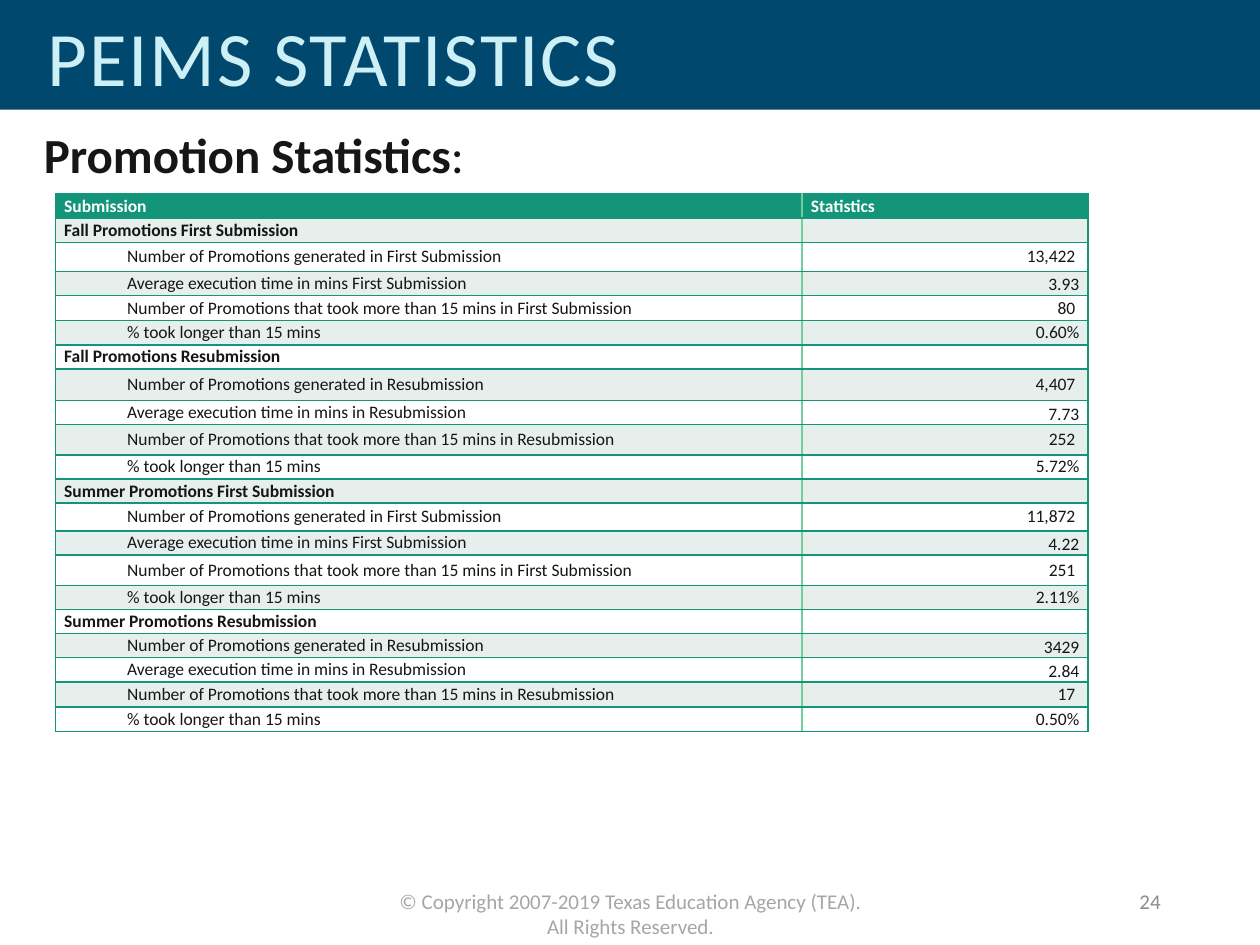
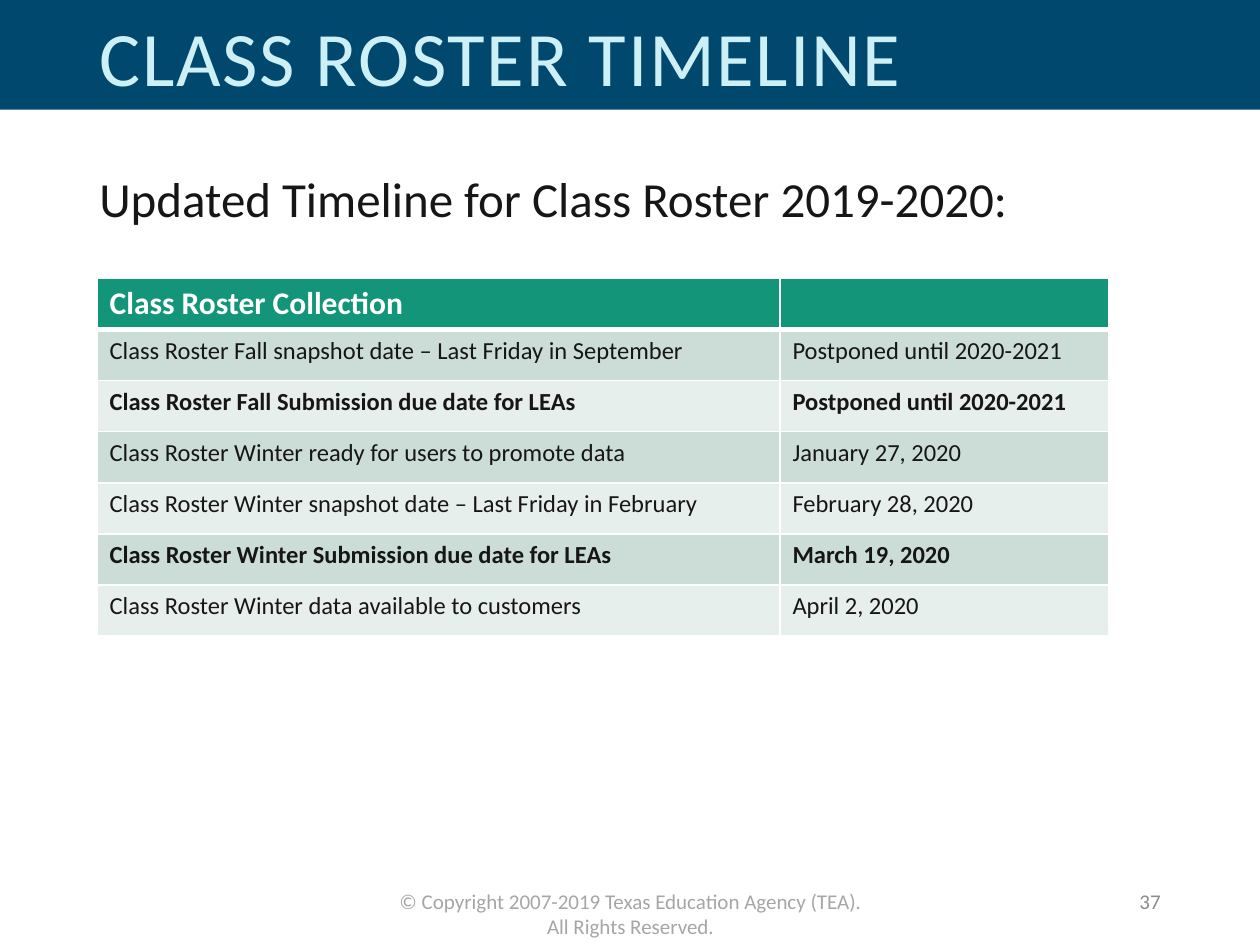
from dataclasses import dataclass
from typing import NamedTuple

from lxml.etree import SubElement
from pptx import Presentation
from pptx.dml.color import RGBColor
from pptx.enum.shapes import MSO_SHAPE
from pptx.enum.text import MSO_ANCHOR as ANCHOR, MSO_AUTO_SIZE as AUTO, PP_ALIGN as ALIGN
from pptx.oxml.ns import qn
from pptx.util import Emu, Inches, Pt

# Page grid: 100 columns by 75 rows
SLIDE_W, SLIDE_H = Inches(10), Inches(7.5)
GRID_COLS, GRID_ROWS = 100, 75

# Shared look
FONT = "Calibri"
NAVY = RGBColor(0x00, 0x48, 0x6E)
PALE_AQUA = RGBColor(0xCC, 0xF0, 0xF5)
INK = RGBColor(0x17, 0x16, 0x16)
FOOTER_GRAY = RGBColor(0xA6, 0xA6, 0xA6)
NUMBER_GRAY = RGBColor(0x8C, 0x8C, 0x8C)
GREEN = RGBColor(0x12, 0x95, 0x79)
LIGHT_GREEN = RGBColor(0x73, 0xCD, 0x9D)
SAGE = RGBColor(0xCC, 0xDD, 0xD7)
MIST = RGBColor(0xE7, 0xEF, 0xEC)
WHITE = RGBColor(0xFF, 0xFF, 0xFF)

COPYRIGHT = "© Copyright 2007-2019 Texas Education Agency (TEA). All Rights Reserved."


class Box(NamedTuple):
    """A place on the page grid."""
    left: float
    top: float
    width: float
    height: float


class Line(NamedTuple):
    color: RGBColor
    width: float = 1


class Style(NamedTuple):
    size: float
    color: RGBColor
    bold: bool = False
    align: ALIGN = ALIGN.LEFT


class Cell(NamedTuple):
    text: str = ""
    bold: bool = False
    indent: float = 0
    align: ALIGN = ALIGN.LEFT
    anchor: ANCHOR = ANCHOR.TOP


@dataclass
class TableSpec:
    box: Box
    col_widths: list[float]
    row_heights: list[float]
    cells: list[list[Cell]]
    bands: tuple[RGBColor, RGBColor]
    head_size: float
    body_size: float
    margins: tuple[float, float]
    outer: Line
    inner_vertical: Line
    under_head: Line


@dataclass
class SlideSpec:
    title: str
    title_box: Box
    lead: list[tuple[str, bool]]
    lead_box: Box
    number: int
    table: TableSpec


def col(n: float) -> Emu:
    return Emu(round(SLIDE_W * n / GRID_COLS))


def row(n: float) -> Emu:
    return Emu(round(SLIDE_H * n / GRID_ROWS))


def place(box: Box) -> tuple[Emu, Emu, Emu, Emu]:
    return col(box.left), row(box.top), col(box.width), row(box.height)


def style_paragraph(p, style: Style) -> None:
    p.alignment = style.align
    f = p.font
    f.name, f.size, f.bold = FONT, Pt(style.size), style.bold
    f.color.rgb = style.color


def add_text(s, box: Box, text: str, style: Style, anchor: ANCHOR = ANCHOR.TOP):
    tf = s.shapes.add_textbox(*place(box)).text_frame
    tf.word_wrap, tf.vertical_anchor = True, anchor
    p = tf.paragraphs[0]
    p.text = text
    style_paragraph(p, style)
    return p


def add_frame(s, spec: SlideSpec) -> None:
    """Title on its band, lead line, footer and page number."""
    title = s.shapes.title
    band = s.shapes.add_shape(MSO_SHAPE.RECTANGLE, *place(Box(0, 0, GRID_COLS, 8.7)))
    band.shadow.inherit = False
    band.fill.solid()
    band.fill.fore_color.rgb = NAVY
    band.line.fill.background()
    title.element.addprevious(band.element)

    title.left, title.top, title.width, title.height = place(spec.title_box)
    tf = title.text_frame
    tf.auto_size, tf.vertical_anchor = AUTO.NONE, ANCHOR.MIDDLE
    p = tf.paragraphs[0]
    r = p.add_run()
    r.text = spec.title
    p.line_spacing = 0.9
    style_paragraph(p, Style(44, PALE_AQUA))
    r._r.get_or_add_rPr().set("spc", "100")

    p = add_text(s, spec.lead_box, "", Style(28, INK))
    p.line_spacing = 0.9
    for text, bold in spec.lead:
        r = p.add_run()
        r.text, r.font.bold = text, bold

    add_text(s, Box(30.4, 70, 39.3, 3), COPYRIGHT, Style(12, FOOTER_GRAY, align=ALIGN.CENTER))
    add_text(s, Box(70.6, 69.5, 22.5, 4), str(spec.number),
             Style(12, NUMBER_GRAY, align=ALIGN.RIGHT), ANCHOR.MIDDLE)


def set_border(cell, side: str, line: Line) -> None:
    ln = SubElement(cell._tc.get_or_add_tcPr(), qn(f"a:ln{side}"), w=str(Pt(line.width)))
    fill = SubElement(ln, qn("a:solidFill"))
    SubElement(fill, qn("a:srgbClr"), val=str(line.color))


def fill_cell(cell, content: Cell, spec: TableSpec, is_head: bool) -> None:
    cell.margin_left = cell.margin_right = Inches(spec.margins[0])
    cell.margin_top = cell.margin_bottom = Inches(spec.margins[1])
    cell.vertical_anchor = content.anchor
    p = cell.text_frame.paragraphs[0]
    p.text = content.text
    if content.indent:
        p.level = 1
        p._p.get_or_add_pPr().set("marL", str(Inches(content.indent)))
    size = spec.head_size if is_head else spec.body_size
    style_paragraph(p, Style(size, WHITE if is_head else INK, content.bold, content.align))
    if not content.text:  # keeps an empty row from growing
        SubElement(p._p, qn("a:endParaRPr"), sz=str(round(size * 100)))


def add_data_table(s, spec: TableSpec) -> None:
    n_rows, n_cols = len(spec.cells), len(spec.col_widths)
    table = s.shapes.add_table(n_rows, n_cols, *place(spec.box)).table
    table.first_row = table.horz_banding = False
    for column, width in zip(table.columns, spec.col_widths):
        column.width = col(width)
    for i, contents in enumerate(spec.cells):
        table.rows[i].height = row(spec.row_heights[i])
        for j, content in enumerate(contents):
            cell = table.cell(i, j)
            set_border(cell, "L", spec.outer if j == 0 else spec.inner_vertical)
            set_border(cell, "R", spec.outer if j == n_cols - 1 else spec.inner_vertical)
            set_border(cell, "T", spec.under_head if i == 1 else spec.outer)
            set_border(cell, "B", spec.under_head if i == 0 else spec.outer)
            cell.fill.solid()
            cell.fill.fore_color.rgb = GREEN if i == 0 else spec.bands[(i - 1) % 2]
            fill_cell(cell, content, spec, i == 0)


# Promotion statistics: four sections of four measures
FIRST, RESUB = "First Submission", "Resubmission"
PROMOTIONS = [
    ("Fall", FIRST, ["13,422 ", "3.93", "80 ", "0.60%"]),
    ("Fall", RESUB, ["4,407 ", "7.73", "252 ", "5.72%"]),
    ("Summer", FIRST, ["11,872 ", "4.22", "251 ", "2.11%"]),
    ("Summer", RESUB, ["3429", "2.84", "17 ", "0.50%"]),
]


def promotion_cells() -> list[list[Cell]]:
    mid = ANCHOR.MIDDLE
    cells = [[Cell(text, True, anchor=mid) for text in ("Submission", "Statistics")]]
    for season, kind, values in PROMOTIONS:
        cells.append([Cell(f"{season} Promotions {kind}", True, anchor=mid), Cell()])
        labels = [
            f"Number of Promotions generated in {kind}",
            f"Average execution time in mins {'in ' if kind == RESUB else ''}{kind}",
            f"Number of Promotions that took more than 15 mins in {kind}",
            "% took longer than 15 mins",
        ]
        for label, value in zip(labels, values):
            anchor = mid if value.endswith((" ", "%")) else ANCHOR.BOTTOM
            cells.append([Cell(label, indent=0.5, anchor=mid),
                          Cell(value, align=ALIGN.RIGHT, anchor=anchor)])
    return cells


# Class roster timeline: event, date, bold
ROSTER = [
    ("Class Roster Collection", "", True),
    ("Class Roster Fall snapshot date – Last Friday in September", "Postponed until 2020-2021", False),
    ("Class Roster Fall Submission due date for LEAs", "Postponed until 2020-2021", True),
    ("Class Roster Winter ready for users to promote data", "January 27, 2020", False),
    ("Class Roster Winter snapshot date – Last Friday in February", "February 28, 2020", False),
    ("Class Roster Winter Submission due date for LEAs", "March 19, 2020", True),
    ("Class Roster Winter data available to customers", "April 2, 2020", False),
]

SLIDES = [
    SlideSpec(
        "PEIMS STATISTICS", Box(2.8, 0.5, 84.1, 8.7),
        [("Promotion Statistics", True), (":", False)], Box(2.5, 9.9, 90.6, 5),
        24,
        TableSpec(
            Box(4.4, 15.4, 82, 42.6), [59.25, 22.7],
            [1.92, 1.92, 2.3, 1.92, 2, 1.92, 1.92, 2.5, 1.92, 2.4, 1.92,
             1.92, 2.2, 1.92, 2.4, 1.92, 1.92, 1.92, 1.92, 2, 1.92],
            promotion_cells(), (MIST, WHITE), 10, 10, (0.07, 0),
            Line(GREEN), Line(LIGHT_GREEN), Line(GREEN)),
    ),
    SlideSpec(
        "CLASS ROSTER TIMELINE", Box(6.9, 0.5, 80, 8.7),
        [("Updated Timeline for Class Roster 2019-2020:", False)], Box(6.9, 13.4, 86.2, 5),
        37,
        TableSpec(
            Box(7.7, 22.1, 80.3, 28.4), [54.2, 26.1], [28.4 / len(ROSTER)] * len(ROSTER),
            [[Cell(event, bold), Cell(date, bold)] for event, date, bold in ROSTER],
            (SAGE, MIST), 18, 14, (0.1, 0.05),
            Line(WHITE), Line(WHITE), Line(WHITE, 3)),
    ),
]


def main() -> None:
    prs = Presentation()
    prs.slide_width, prs.slide_height = SLIDE_W, SLIDE_H
    title_only = prs.slide_layouts[5]
    for spec in SLIDES:
        s = prs.slides.add_slide(title_only)
        add_frame(s, spec)
        add_data_table(s, spec.table)
    prs.save("out.pptx")


if __name__ == "__main__":
    main()
